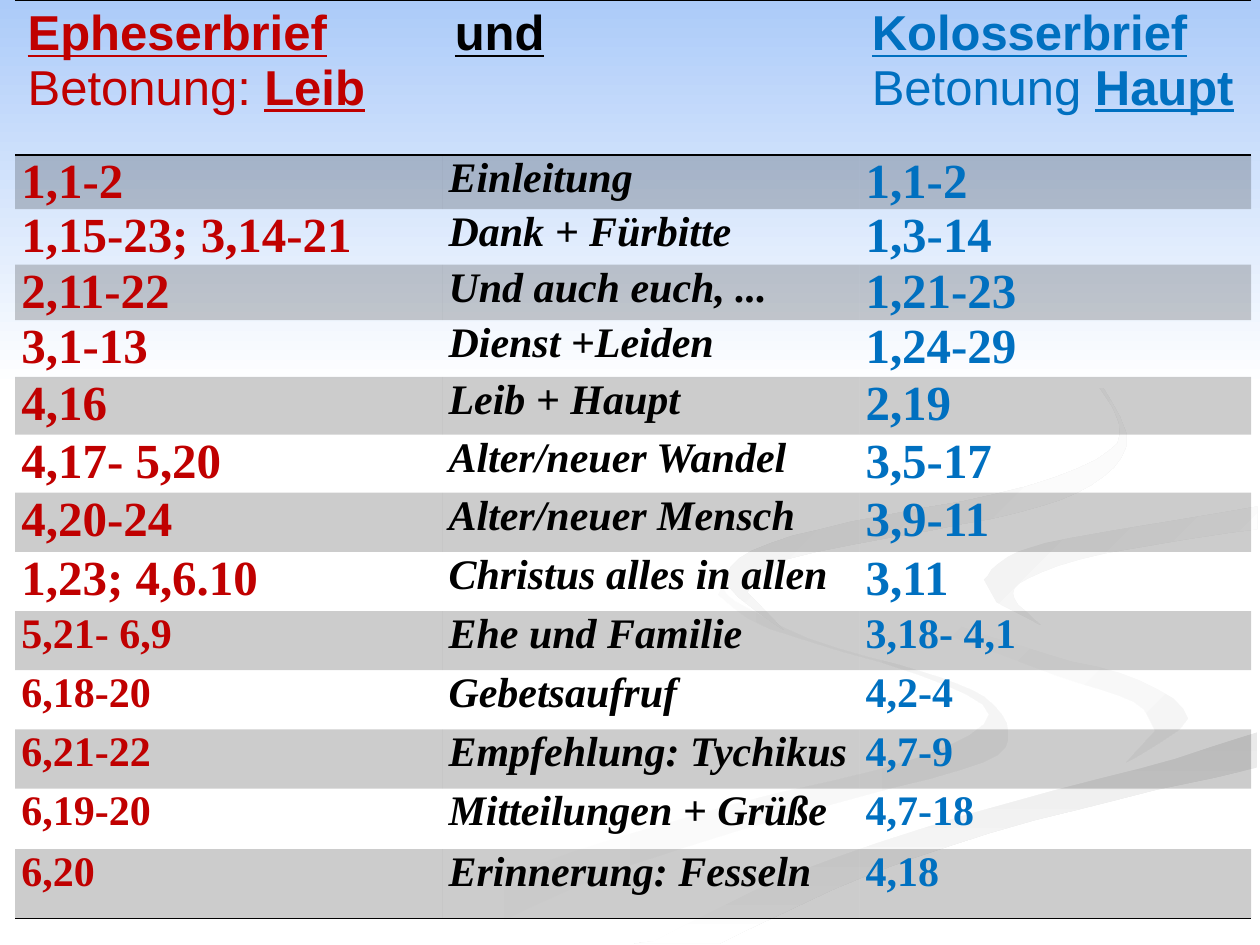
from dataclasses import dataclass
from itertools import chain

from lxml.etree import SubElement
from pptx import Presentation
from pptx.dml.color import RGBColor
from pptx.enum.shapes import MSO_SHAPE as Shape
from pptx.oxml.ns import qn
from pptx.util import Pt

PX = 9144  # EMU in one px: 100 px to the inch


@dataclass(frozen=True)
class Theme:
    red: str = "C00000"
    blue: str = "0070C0"
    black: str = "000000"
    white: str = "FFFFFF"
    sky: str = "ACCBF9"
    mist: str = "F5F5F5"
    road: str = "EAEAEA"
    pearl: str = "F1F1F1"
    smoke: str = "EDEDED"
    head_font: str = "Arial"
    body_font: str = "Times New Roman"
    large: int = 28
    small: int = 24
    band_alpha: int = 20000
    plain_table: str = "{2D5ABB26-0587-4C30-8999-92F81FD0307C}"


THEME = Theme()
COLUMN_COLORS = (THEME.red, THEME.black, THEME.blue)
COLUMN_WIDTHS = (339, 331, 311)
ROW_HEIGHTS = (123, 43, 44, 44, 45, 46, 46, 47, 47, 47, 47, 47, 48, 55)
FIRST_SMALL_ROW = 9

# Each header line is a list of (text, emphasised) runs.
HEADER = (
    ([("Epheserbrief", True)], [("Betonung: ", False), ("Leib", True)]),
    ([("und", True)],),
    ([("Kolosserbrief", True)], [("Betonung ", False), ("Haupt", True)]),
)
PASSAGES = (
    ("1,1-2", "Einleitung", "1,1-2"),
    ("1,15-23; 3,14-21", "Dank + Fürbitte", "1,3-14"),
    ("2,11-22", "Und auch euch, ...", "1,21-23"),
    ("3,1-13", "Dienst +Leiden", "1,24-29"),
    ("4,16", "Leib + Haupt", "2,19"),
    ("4,17- 5,20", "Alter/neuer Wandel", "3,5-17"),
    ("4,20-24", "Alter/neuer Mensch", "3,9-11"),
    ("1,23; 4,6.10", "Christus alles in allen", "3,11"),
    ("5,21- 6,9", "Ehe und Familie", "3,18- 4,1"),
    ("6,18-20", "Gebetsaufruf", "4,2-4"),
    ("6,21-22", "Empfehlung: Tychikus", "4,7-9"),
    ("6,19-20", "Mitteilungen + Grüße", "4,7-18"),
    ("6,20", "Erinnerung: Fesseln", "4,18"),
)

# Edges that neighbouring ribbons share.
BEND = ((725, 464), (745, 490), (831, 519), (905, 540), (943, 570))
ROAD_TOP = ((519, 747), (630, 693), (765, 647), (904, 610), (998, 581))
LOOP_TOP = ((781, 460), (800, 442), (850, 427), (998, 402))

# Ribbons from back to front: start colour, end colour, clockwise angle, edges.
RIBBONS = (
    (THEME.white, THEME.mist, 0, (
        ((574, 464), (583, 477), (642, 507), (731, 533), (781, 553), (800, 581),
         (780, 605), (676, 634), (499, 687), (361, 749)),
        ((300, 749), (417, 690), (579, 639), (727, 602), (785, 567), (728, 535),
         (611, 499), (570, 472)))),
    (THEME.white, THEME.mist, 45, (
        BEND + ((894, 605),),
        ((917, 580), (900, 557), (838, 536), (755, 505)))),
    (THEME.road, THEME.white, 90, (
        ROAD_TOP, ((998, 609), (821, 651), (695, 692), (571, 749)), ((503, 749),))),
    (THEME.white, THEME.white, 0, (
        BEND + ((911, 600), (780, 634), (619, 684), (477, 749)),
        ROAD_TOP,
        ((998, 538), (866, 509), (804, 485), LOOP_TOP[0]),
        LOOP_TOP,
        ((998, 387), (874, 408), (770, 427), BEND[0]))),
    (THEME.pearl, THEME.white, 45, (
        LOOP_TOP,
        ((998, 420), (878, 439), (816, 459), (805, 475), (826, 496)),
        ((791, 478),))),
    (THEME.smoke, THEME.white, 45, (
        ((762, 233), (846, 279), (888, 335), (870, 365), (791, 392), (676, 414),
         (597, 437), (578, 465), (622, 500)),
        ((593, 470), (624, 444), (739, 421), (825, 402), (876, 378), (894, 344),
         (864, 291)))),
)


def apply(target, **values):
    for name, value in values.items():
        setattr(target, name, value)


def smooth(points, steps=4):
    """Return points along a Catmull-Rom curve through the given points."""
    padded = (points[0], *points, points[-1])
    curve = [points[0]]
    for a, b, c, d in zip(padded, padded[1:], padded[2:], padded[3:]):
        for step in range(1, steps + 1):
            t = step / steps
            curve.append(tuple(
                q + t * (r - p + t * (2 * p - 5 * q + 4 * r - s
                                      + t * (3 * q - p - 3 * r + s))) / 2
                for p, q, r, s in zip(a, b, c, d)))
    return curve


def paint_gradient(shape, start, end, clockwise_angle):
    shape.shadow.inherit = False
    shape.line.fill.background()
    shape.fill.gradient()
    shape.fill.gradient_angle = -clockwise_angle % 360
    for stop, color in zip(shape.fill.gradient_stops, (start, end)):
        stop.color.rgb = RGBColor.from_string(color)


def add_ribbon(slide, start, end, angle, edges):
    outline = list(chain.from_iterable(map(smooth, edges)))
    builder = slide.shapes.build_freeform(*outline[0], scale=PX)
    builder.add_line_segments(outline[1:], close=True)
    paint_gradient(builder.convert_to_shape(), start, end, angle)


def add_sky(slide):
    sky = slide.shapes.add_shape(Shape.RECTANGLE, 0, 0, 1000 * PX, 308 * PX)
    paint_gradient(sky, THEME.sky, THEME.white, 90)


def add_run(paragraph, text, color, **font_values):
    run = paragraph.add_run()
    run.text = text
    apply(run.font, **font_values)
    run.font.color.rgb = RGBColor.from_string(color)


def add_border(cell, side):
    line = SubElement(cell._tc.get_or_add_tcPr(), qn(f"a:ln{side}"), w=str(Pt(1)))
    fill = SubElement(line, qn("a:solidFill"))
    SubElement(fill, qn("a:srgbClr"), val=THEME.black)


def fill_band(cell):
    cell.fill.solid()
    cell.fill.fore_color.rgb = RGBColor.from_string(THEME.black)
    color = cell._tc.tcPr.find(f"{qn('a:solidFill')}/{qn('a:srgbClr')}")
    SubElement(color, qn("a:alpha"), val=str(THEME.band_alpha))


def write_header(cell, lines, color):
    frame = cell.text_frame
    for index, runs in enumerate(lines):
        paragraph = frame.add_paragraph() if index else frame.paragraphs[0]
        for text, strong in runs:
            add_run(paragraph, text, color, name=THEME.head_font,
                    size=Pt(THEME.large), bold=strong, underline=strong)
    for side in "TB":
        add_border(cell, side)


def write_passage(cell, text, row, column):
    middle = column == 1
    size = THEME.small if middle or row >= FIRST_SMALL_ROW else THEME.large
    apply(cell, margin_left=5 * PX, margin_right=5 * PX, margin_top=0, margin_bottom=0)
    paragraph = cell.text_frame.paragraphs[0]
    paragraph.space_after = Pt(8)
    add_run(paragraph, text, COLUMN_COLORS[column], name=THEME.body_font,
            size=Pt(size), bold=True, italic=middle)
    if row == len(PASSAGES):
        add_border(cell, "B")
    if row % 2:
        fill_band(cell)


def add_comparison(slide):
    frame = slide.shapes.add_table(
        len(ROW_HEIGHTS), len(COLUMN_WIDTHS), 12 * PX, 0,
        sum(COLUMN_WIDTHS) * PX, sum(ROW_HEIGHTS) * PX)
    table = frame.table
    apply(table, first_row=False, horz_banding=False)
    table._tbl.tblPr.find(qn("a:tableStyleId")).text = THEME.plain_table
    for column, width in zip(table.columns, COLUMN_WIDTHS):
        column.width = width * PX
    for row, height in zip(table.rows, ROW_HEIGHTS):
        row.height = height * PX
    for column, lines in enumerate(HEADER):
        write_header(table.cell(0, column), lines, COLUMN_COLORS[column])
    for row, passage in enumerate(PASSAGES, start=1):
        for column, text in enumerate(passage):
            write_passage(table.cell(row, column), text, row, column)


def main():
    presentation = Presentation()
    apply(presentation, slide_width=1000 * PX, slide_height=750 * PX)
    slide = presentation.slides.add_slide(presentation.slide_layouts[6])
    for ribbon in RIBBONS:
        add_ribbon(slide, *ribbon)
    add_sky(slide)
    add_comparison(slide)
    presentation.save("out.pptx")


if __name__ == "__main__":
    main()
